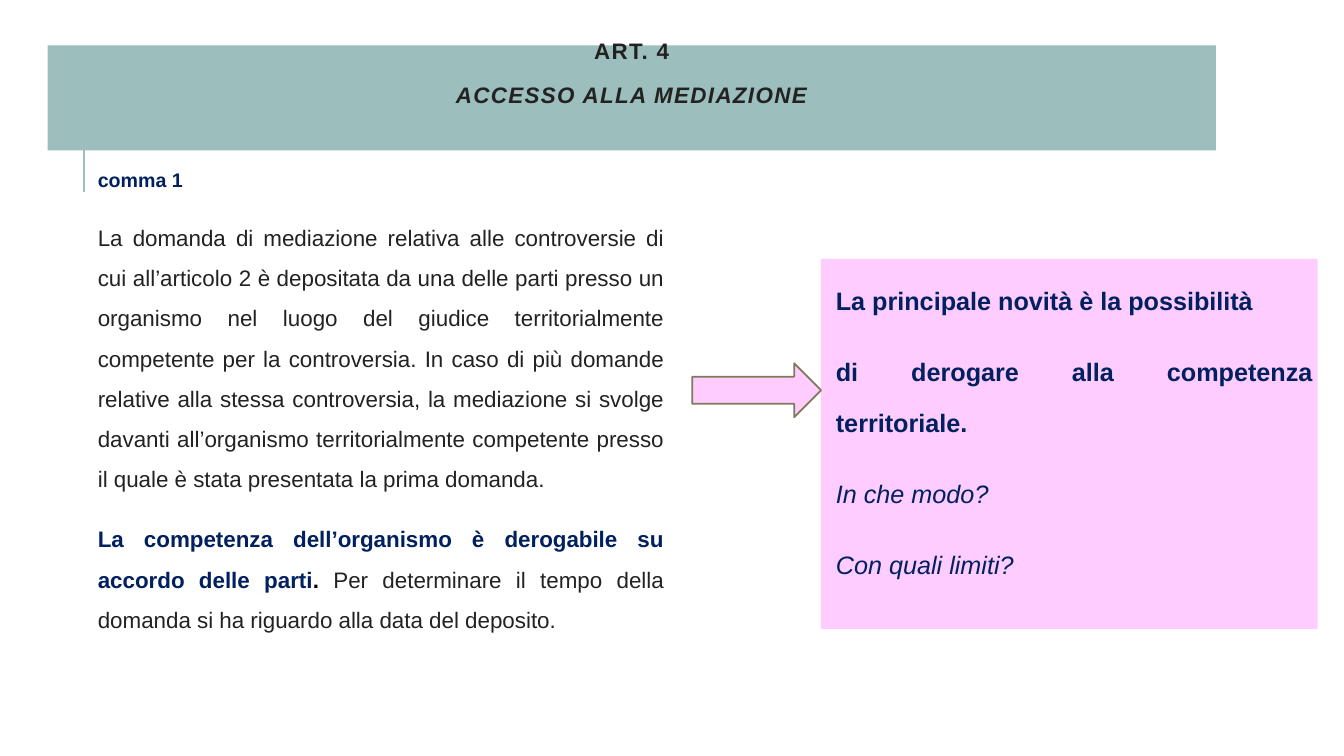
from pptx import Presentation
from pptx.dml.color import RGBColor
from pptx.enum.shapes import MSO_CONNECTOR, MSO_SHAPE
from pptx.enum.text import MSO_ANCHOR, PP_ALIGN
from pptx.oxml.ns import qn
from pptx.util import Pt
from lxml import etree

RECT, ARROW = MSO_SHAPE.RECTANGLE, MSO_SHAPE.RIGHT_ARROW
LINE = MSO_CONNECTOR.STRAIGHT
TOP, MIDDLE = MSO_ANCHOR.TOP, MSO_ANCHOR.MIDDLE
CENTER, JUSTIFY = PP_ALIGN.CENTER, PP_ALIGN.JUSTIFY

SAGE, PINK, OLIVE, WHITE = "9CBEBD", "FFCCFF", "7D7A5C", "FFFFFF"
NAVY, DARK, BLACK = "002060", "222222", "000000"


def color(code):
    return RGBColor.from_string(code)


class Page:
    """Holds the font and the current slide."""

    def __init__(self, slide, font):
        self.slide, self.font = slide, font

    def shape(self, kind, box, fill, line=None, width=1):
        item = self.slide.shapes.add_shape(kind, *map(Pt, box))
        item.shadow.inherit = False
        item.fill.solid()
        item.fill.fore_color.rgb = color(fill)
        if line:
            item.line.color.rgb = color(line)
            item.line.width = Pt(width)
        else:
            item.line.fill.background()
        return item

    def rule(self, start, end, line, width):
        item = self.slide.shapes.add_connector(LINE, *map(Pt, start + end))
        item.line.color.rgb = color(line)
        item.line.width = Pt(width)
        etree.SubElement(item._element.spPr, qn("a:effectLst"))

    def panel(self, box, fill, inset, paras, anchor=TOP):
        """Paras are pairs: paragraph format and a list of (text, font)."""
        frame = self.shape(RECT, box, fill).text_frame
        frame.word_wrap = True
        frame.vertical_anchor = anchor
        for side, gap in zip(("left", "top", "right", "bottom"), inset):
            setattr(frame, f"margin_{side}", Pt(gap))
        for i, (form, runs) in enumerate(paras):
            para = frame.add_paragraph() if i else frame.paragraphs[0]
            for key, value in form.items():
                setattr(para, key, value)
            for text, font in runs:
                self.run(para, text, **font)

    def run(self, para, text, ink, space=0, **font):
        run = para.add_run()
        run.text = text
        run.font.name = self.font
        run.font.color.rgb = color(ink)
        for key, value in font.items():
            setattr(run.font, key, value)
        if space:
            run.font._element.set("spc", str(space * 100))


def main():
    deck = Presentation()
    deck.slide_width, deck.slide_height = Pt(960), Pt(540)
    page = Page(deck.slides.add_slide(deck.slide_layouts[6]), "Arial")

    # Title band with its side rule
    page.rule((60, 65), (60, 137), SAGE, 1.5)
    head = dict(ink=DARK, size=Pt(16), bold=True, space=1)
    tight = dict(alignment=CENTER, line_spacing=0.8)
    page.panel((34, 32.4, 834.5, 75), SAGE, (7.2, 0, 7.2, 33), [
        (tight, [("ART. 4", head)]),
        (tight | dict(space_before=Pt(16)),
         [("ACCESSO ALLA MEDIAZIONE", head | dict(italic=True))]),
    ], MIDDLE)

    # Text of the article
    base = dict(alignment=JUSTIFY, space_before=Pt(12), space_after=Pt(2))
    wide = base | dict(line_spacing=1.5)
    plain = dict(ink=DARK, size=Pt(16), bold=False)
    strong = dict(ink=NAVY, size=Pt(16), bold=True)
    page.panel((66.3, 121, 411.7, 381.6), WHITE, (3.6,) * 4, [
        (base | dict(line_spacing=0.7),
         [("comma 1", strong | dict(size=Pt(14)))]),
        (wide, [(
            "La domanda di mediazione relativa alle controversie di cui "
            "all’articolo 2 è depositata da una delle parti presso un "
            "organismo nel luogo del giudice territorialmente competente "
            "per la controversia. In caso di più domande relative alla "
            "stessa controversia, la mediazione si svolge davanti "
            "all’organismo territorialmente competente presso il quale è "
            "stata presentata la prima domanda.", plain)]),
        (wide, [
            ("La competenza dell’organismo è derogabile su accordo delle "
             "parti", strong),
            (". ", strong | dict(ink=BLACK)),
            ("Per determinare il tempo della domanda si ha riguardo alla "
             "data del deposito.", plain)]),
    ])

    # Main change, with the arrow that leads to it
    loose = base | dict(line_spacing=1.7)
    claim = dict(ink=NAVY, size=Pt(18), bold=True)
    query = dict(ink=NAVY, size=Pt(18), italic=True)
    notes = [("La principale novità è la possibilità", claim),
             ("di derogare alla competenza territoriale.", claim),
             ("In che modo?", query),
             ("Con quali limiti?", query)]
    page.panel((586.3, 185, 355, 264.3), PINK, (10.8, 3.6, 3.6, 3.6),
               [(loose, [note]) for note in notes])
    page.shape(ARROW, (494.5, 259.5, 92, 38.5), PINK, OLIVE, 1.25)

    deck.save("out.pptx")


if __name__ == "__main__":
    main()
